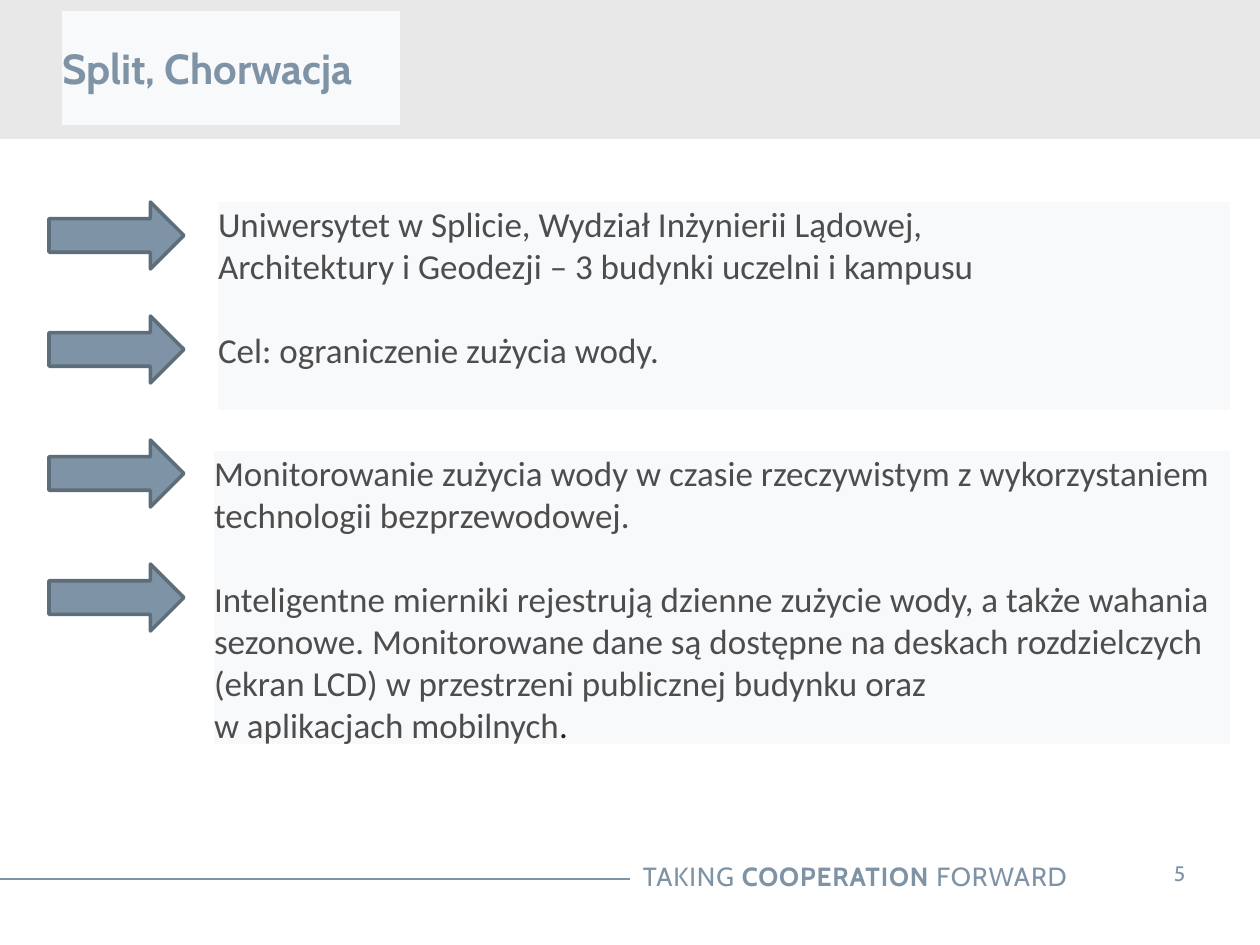
import pptx
import pptx.dml.color
import pptx.enum.shapes
import pptx.enum.text
import pptx.oxml
import pptx.oxml.ns
import pptx.util

PX = 914400 / 126
WIDTH, HEIGHT = 1260, 945
BLUE, DARK_BLUE = "7E93A5", "5D6D7A"
GREY, PALE, INK, BLACK = "E8E8E8", "F8F9FA", "4D4D4E", "202124"

TITLE = "Split, Chorwacja"
TITLE_BOX = (62, 11, 338, 114)
BAND_BOX = (0, 0, WIDTH, 139)
# Each panel: its box, then its paragraphs with the space before each in points.
PANELS = [
    ((218, 202, 1012, 208), [
        (0, "Uniwersytet w Splicie, Wydział Inżynierii Lądowej,"),
        (0, "Architektury i Geodezji – 3 budynki uczelni i kampusu"),
        (24, "Cel: ograniczenie zużycia wody."),
    ]),
    ((214, 451, 1016, 293), [
        (0, "Monitorowanie zużycia wody w czasie rzeczywistym z wykorzystaniem "
            "technologii bezprzewodowej."),
        (24, "Inteligentne mierniki rejestrują dzienne zużycie wody, a także wahania "
             "sezonowe. Monitorowane dane są dostępne na deskach rozdzielczych "
             "(ekran LCD) w przestrzeni publicznej budynku oraz \n"
             "w aplikacjach mobilnych"),
    ]),
]
ARROW_TOPS = [202, 316, 440, 564]
ARROW_LEFT, ARROW_WIDTH, ARROW_HEIGHT = 49, 135, 67
MOTTO = [("TAKING ", False), ("COOPERATION", True), (" FORWARD", False)]
MOTTO_BOX = (489, 854, 591, 44)
NUMBER_BOX = (1133, 848, 93, 50)
RULE_Y, RULE_END = 879, 630


def px(*lengths):
    return [pptx.util.Emu(round(length * PX)) for length in lengths]


def color(value):
    return pptx.dml.color.RGBColor.from_string(value)


def fill(shape, value):
    shape.fill.solid()
    shape.fill.fore_color.rgb = color(value)


def add_span(para, text, size, ink, font="Cabin", bold=False, spacing=0):
    """Add text to a paragraph, turning newlines into line breaks."""
    for index, line in enumerate(text.split("\n")):
        if index:
            para.add_line_break()
        span = para.add_run()
        span.text = line
        span.font.size = pptx.util.Pt(size)
        span.font.name = font
        span.font.bold = bold
        span.font.color.rgb = color(ink)
        if spacing:
            span.font._element.set("spc", str(spacing))


def prepare_frame(shape, anchor="TOP", margins=(0, 0), wrap=True):
    frame = shape.text_frame
    frame.auto_size = pptx.enum.text.MSO_AUTO_SIZE.NONE
    frame.word_wrap = wrap
    frame.vertical_anchor = pptx.enum.text.MSO_ANCHOR[anchor]
    side, edge = px(*margins)
    frame.margin_left = frame.margin_right = side
    frame.margin_top = frame.margin_bottom = edge
    return frame


def add_preset(page, kind, box, fill_color, line_color=None):
    shape = page.shapes.add_shape(pptx.enum.shapes.MSO_SHAPE[kind], *px(*box))
    shape.shadow.inherit = False
    fill(shape, fill_color)
    if line_color:
        shape.line.color.rgb = color(line_color)
        shape.line.width = pptx.util.Pt(2)
    else:
        shape.line.fill.background()
    return shape


def add_title(page):
    title = page.shapes.title
    title.left, title.top, title.width, title.height = px(*TITLE_BOX)
    fill(title, PALE)
    para = prepare_frame(title, "MIDDLE").paragraphs[0]
    para.alignment = pptx.enum.text.PP_ALIGN.LEFT
    add_span(para, TITLE, 24, BLUE, bold=True)
    title.element.getparent().append(title.element)  # in front of the band


def add_panel(page, box, paragraphs):
    frame = prepare_frame(add_preset(page, "RECTANGLE", box, PALE))
    for index, (gap, text) in enumerate(paragraphs):
        para = frame.add_paragraph() if index else frame.paragraphs[0]
        para.alignment = pptx.enum.text.PP_ALIGN.LEFT
        para.space_before = pptx.util.Pt(gap)
        add_span(para, text, 20, INK, font="Calibri")
    return para


def add_footer(page):
    rule = page.shapes.add_connector(
        pptx.enum.shapes.MSO_CONNECTOR.STRAIGHT, *px(0, RULE_Y, RULE_END, RULE_Y))
    rule.line.color.rgb = color(BLUE)
    rule.line.width = pptx.util.Pt(0.75)
    properties = rule.element.find(pptx.oxml.ns.qn("p:spPr"))
    properties.append(pptx.oxml.parse_xml(
        "<a:effectLst %s/>" % pptx.oxml.ns.nsdecls("a")))

    motto = page.shapes.add_textbox(*px(*MOTTO_BOX))
    para = prepare_frame(motto, margins=(13, 6)).paragraphs[0]
    para.alignment = pptx.enum.text.PP_ALIGN.RIGHT
    for text, bold in MOTTO:
        add_span(para, text, 15, BLUE, bold=bold, spacing=50)

    number = page.shapes.add_textbox(*px(*NUMBER_BOX))
    para = prepare_frame(number, margins=(25, 13), wrap=False).paragraphs[0]
    para.alignment = pptx.enum.text.PP_ALIGN.CENTER
    add_span(para, "5", 12, BLUE)


def main():
    deck = pptx.Presentation()
    deck.slide_width, deck.slide_height = px(WIDTH, HEIGHT)
    page = deck.slides.add_slide(deck.slide_layouts.get_by_name("Title Only"))
    add_preset(page, "RECTANGLE", BAND_BOX, GREY)
    add_footer(page)
    add_title(page)
    for box, paragraphs in PANELS:
        last_para = add_panel(page, box, paragraphs)
    add_span(last_para, ".", 20, BLACK, font="Calibri")
    for top in ARROW_TOPS:
        add_preset(page, "RIGHT_ARROW", (ARROW_LEFT, top, ARROW_WIDTH, ARROW_HEIGHT),
                   BLUE, DARK_BLUE)
    deck.save("out.pptx")


if __name__ == "__main__":
    main()
